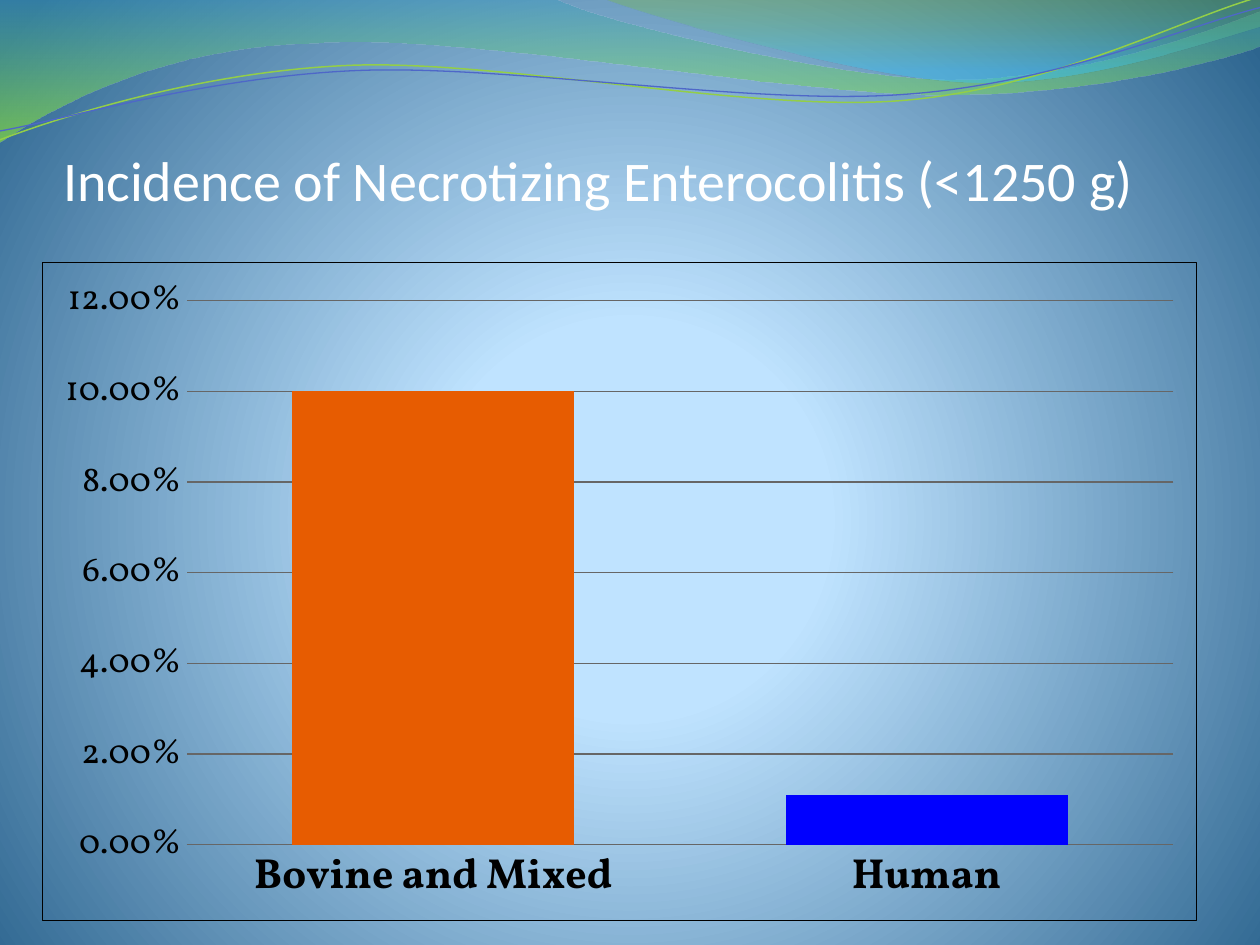
import math

import pptx
import pptx.chart.data
import pptx.dml.color
import pptx.enum.chart
import pptx.enum.text
import pptx.oxml
import pptx.oxml.ns
import pptx.util

WIDTH, HEIGHT = 10, 7.5
COLORS = {
    "title": "FFFFFF", "text": "000000", "grid": "666666", "series": "008000",
    "green line": "93CE48", "blue line": "4E67C8",
}
TITLE = "Incidence of Necrotizing Enterocolitis (<1250 g)"
# category, incidence, bar colour
INCIDENCE = [("Bovine and Mixed", 0.1, "E75C01"), ("Human", 0.011, "0000FF")]

# Gradient stops: position %, colour, opacity %
BACKGROUND = [(0, "C2E4FF", 100), (25, "BFE3FF", 100), (100, "2D658F", 100)]
DOWNWARD = '<a:lin ang="5400000" scaled="1"/>'
CENTRED = ('<a:path path="circle"><a:fillToRect l="10000" t="110000" '
           'r="10000" b="100000"/></a:path>')

# Outlines in slide inches: a pair is a straight step, six numbers are a Bezier curve
BANDS = [
    ((-0.01, -0.01, 10.02, 1.14),
     [(0, 0), (4.4, -0.01), (4.76, 0.17, 6.64, 0.63, 7.58, 0.63),
      (8.53, 0.63, 9.58, 0.26, 10, 0.09), (10.01, 0.36),
      (9.83, 0.44, 8.7, 0.76, 7.46, 0.75), (6.22, 0.75, 3.82, 0.28, 2.57, 0.34),
      (1.29, 0.36, 0.46, 0.83, -0.01, 1.13), (0, 0)],
     [(0, "3B9CBF", 45), (100, "9CFA24", 55)]),
    ((4.79, -0.01, 5.21, 0.7),
     [(4.79, -0.01), (5.09, 0.11, 6.82, 0.62, 7.69, 0.65),
      (8.56, 0.69, 9.61, 0.32, 10, 0.21), (10, 0), (4.79, -0.01)],
     [(0, "7EBE2C", 30), (80, "39C1F1", 45)]),
]
WAVES = [
    ((-0.02, 0.22, 10.02, 0.71),
     [(0, 1.11), (0.48, 0.93, 1.58, 0.57, 2.77, 0.52),
      (3.95, 0.47, 5.93, 0.89, 7.13, 0.8), (8.33, 0.71, 9.38, 0.15, 9.98, -0.02)],
     "green line", 0.85),
    ((-0.02, 0.3, 10.03, 0.58),
     [(0, 1.04), (0.47, 0.96, 1.64, 0.61, 2.83, 0.56),
      (4.03, 0.51, 5.97, 0.84, 7.17, 0.75), (8.36, 0.67, 9.41, 0.21, 10, 0.06)],
     "blue line", 0.75),
]
WAVE_TILT = -2.7
UNITS = 1000  # path units per inch


def rgb(value):
    return pptx.dml.color.RGBColor.from_string(value)


def place(shape, left, top, width, height):
    shape.left, shape.top, shape.width, shape.height = (
        pptx.util.Inches(value) for value in (left, top, width, height))


def set_gradient(fill, element, stops, direction):
    """Swap the first solid fill inside element for a gradient."""
    fill.solid()
    fill.fore_color.rgb = rgb(stops[0][1])
    stop_xml = "".join(
        f'<a:gs pos="{position * 1000}"><a:srgbClr val="{color}">'
        f'<a:alpha val="{opacity * 1000}"/></a:srgbClr></a:gs>'
        for position, color, opacity in stops)
    gradient = pptx.oxml.parse_xml(
        f'<a:gradFill {pptx.oxml.ns.nsdecls("a")} rotWithShape="1">'
        f'<a:gsLst>{stop_xml}</a:gsLst>{direction}</a:gradFill>')
    solid = element.find(".//" + pptx.oxml.ns.qn("a:solidFill"))
    solid.getparent().replace(solid, gradient)


def add_outline(slide, box, outline, tilt=0):
    """Add a freeform filling box, whose steps may be Bezier curves."""
    left, top, width, height = box
    builder = slide.shapes.build_freeform(0, 0, scale=pptx.util.Inches(1) / UNITS)
    builder.add_line_segments([(round(width * UNITS), round(height * UNITS))], close=False)
    shape = builder.convert_to_shape(pptx.util.Inches(left), pptx.util.Inches(top))
    shape.rotation = tilt
    shape.shadow.inherit = False

    cosine, sine = math.cos(math.radians(tilt)), math.sin(math.radians(tilt))

    def point_xml(x, y):
        """Undo the tilt about the box centre."""
        across, down = x - left - width / 2, y - top - height / 2
        local_x = width / 2 + across * cosine + down * sine
        local_y = height / 2 - across * sine + down * cosine
        return f'<a:pt x="{round(local_x * UNITS)}" y="{round(local_y * UNITS)}"/>'

    path = shape.element.find(".//" + pptx.oxml.ns.qn("a:path"))
    for child in list(path):
        path.remove(child)
    for index, step in enumerate(outline):
        tag = "cubicBezTo" if len(step) == 6 else "lnTo" if index else "moveTo"
        points = "".join(point_xml(*pair) for pair in zip(step[::2], step[1::2]))
        path.append(pptx.oxml.parse_xml(
            f'<a:{tag} {pptx.oxml.ns.nsdecls("a")}>{points}</a:{tag}>'))
    if outline[0] == outline[-1]:
        path.append(pptx.oxml.parse_xml(f'<a:close {pptx.oxml.ns.nsdecls("a")}/>'))
    return shape


def add_decoration(slide):
    set_gradient(slide.background.fill, slide.element, BACKGROUND, CENTRED)
    for box, outline, stops in BANDS:
        band = add_outline(slide, box, outline)
        set_gradient(band.fill, band.element, stops, DOWNWARD)
        band.line.fill.background()
    for box, outline, color, width in WAVES:
        wave = add_outline(slide, box, outline, WAVE_TILT)
        wave.fill.background()
        wave.line.color.rgb = rgb(COLORS[color])
        wave.line.width = pptx.util.Pt(width)


def add_title(slide):
    title = slide.shapes.title
    slide.shapes.element.append(title.element)  # in front of the waves
    place(title, 0.05 * WIDTH, 0.77, 0.9 * WIDTH, 1.25)
    frame = title.text_frame
    frame.text = TITLE
    frame.margin_left = frame.margin_right = frame.margin_bottom = 0
    frame.margin_top = pptx.util.Inches(0.05)
    frame.vertical_anchor = pptx.enum.text.MSO_ANCHOR.MIDDLE
    paragraph = frame.paragraphs[0]
    paragraph.alignment = pptx.enum.text.PP_ALIGN.LEFT
    paragraph.font.name = "Calibri"
    paragraph.font.size = pptx.util.Pt(32)
    paragraph.font.color.rgb = rgb(COLORS["title"])


def style_font(font, size, bold=False):
    font.name = "Vollkorn"
    font.size = pptx.util.Pt(size)
    font.bold = bold
    font.color.rgb = rgb(COLORS["text"])


def add_incidence_chart(slide):
    data = pptx.chart.data.CategoryChartData(number_format="0.00%")
    data.categories = [name for name, _, _ in INCIDENCE]
    data.add_series("Series 1", [value for _, value, _ in INCIDENCE])
    frame = slide.shapes.add_chart(
        pptx.enum.chart.XL_CHART_TYPE.COLUMN_CLUSTERED, 0, 0, 0, 0, data)
    place(frame, 0.33, 2.08, 9.17, 5.23)
    chart = frame.chart
    chart.has_legend = chart.has_title = False
    style_font(chart.font, 10)
    border = pptx.oxml.parse_xml(
        f'<c:spPr {pptx.oxml.ns.nsdecls("c", "a")}><a:noFill/><a:ln w="9525"><a:solidFill>'
        f'<a:srgbClr val="{COLORS["text"]}"/></a:solidFill></a:ln></c:spPr>')
    chart.element.find(pptx.oxml.ns.qn("c:txPr")).addprevious(border)

    plot = chart.plots[0]
    plot.gap_width, plot.overlap, plot.vary_by_categories = 75, -25, False
    series = plot.series[0]
    series.invert_if_negative = False
    fills = [(series.format.fill, COLORS["series"])]
    fills += [(series.points[index].format.fill, color)
              for index, (_, _, color) in enumerate(INCIDENCE)]
    for fill, color in fills:
        fill.solid()
        fill.fore_color.rgb = rgb(color)

    categories, values = chart.category_axis, chart.value_axis
    for axis in (categories, values):
        axis.major_tick_mark = axis.minor_tick_mark = pptx.enum.chart.XL_TICK_MARK.NONE
    style_font(categories.tick_labels.font, 24, bold=True)
    style_font(values.tick_labels.font, 20)
    values.minimum_scale, values.maximum_scale, values.major_unit = 0, 0.12, 0.02
    values.tick_labels.number_format = "0.00%"
    values.tick_labels.number_format_is_linked = False
    values.format.line.fill.background()
    values.has_major_gridlines = True
    for line in (categories.format.line, values.major_gridlines.format.line):
        line.color.rgb = rgb(COLORS["grid"])
        line.width = pptx.util.Pt(0.75)


def main():
    presentation = pptx.Presentation()
    presentation.slide_width = pptx.util.Inches(WIDTH)
    presentation.slide_height = pptx.util.Inches(HEIGHT)
    slide = presentation.slides.add_slide(presentation.slide_layouts.get_by_name("Title Only"))
    add_decoration(slide)
    add_title(slide)
    add_incidence_chart(slide)
    presentation.save("out.pptx")


if __name__ == "__main__":
    main()
